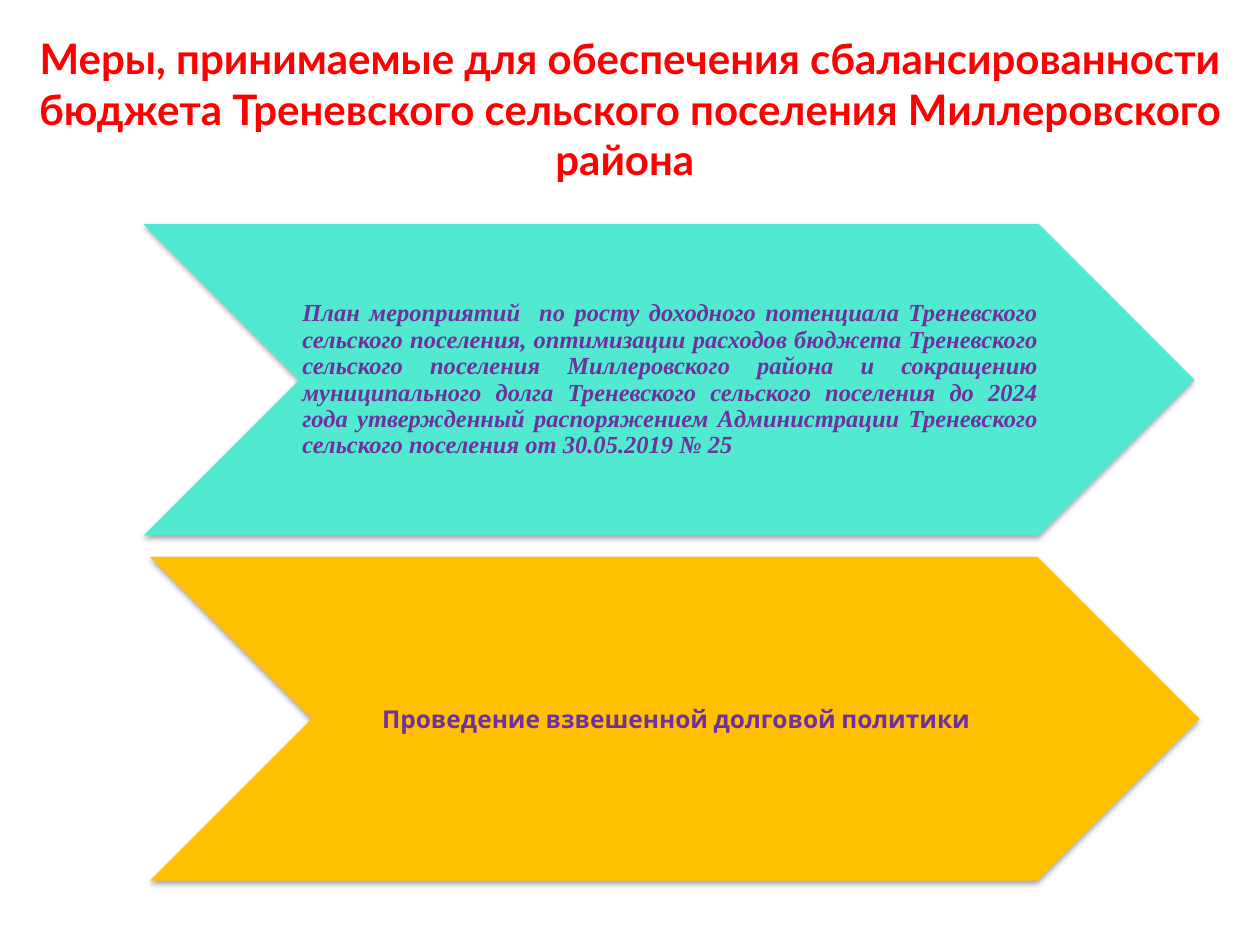
"""Build a slide with two chevrons listing budget balancing measures."""
from dataclasses import dataclass

from lxml import etree
from pptx import Presentation
from pptx.dml.color import RGBColor
from pptx.enum.shapes import MSO_SHAPE
from pptx.enum.text import MSO_ANCHOR, PP_ALIGN
from pptx.oxml.ns import qn
from pptx.shapes.autoshape import Shape
from pptx.slide import Slide
from pptx.text.text import TextFrame
from pptx.util import Inches, Pt

CHEVRON = MSO_SHAPE.CHEVRON
TOP, MIDDLE = MSO_ANCHOR.TOP, MSO_ANCHOR.MIDDLE
CENTER, JUSTIFY = PP_ALIGN.CENTER, PP_ALIGN.JUSTIFY
COLORS = {
    "title": "FF0000",
    "text": "7030A0",
    "plan": "51E9D0",
    "debt": "FFC000",
    "shadow": "000000",
}
TITLE = (
    "Меры, принимаемые для обеспечения сбалансированности бюджета "
    "Треневского сельского поселения Миллеровского района "
)
PLAN = (
    "План мероприятий  по росту доходного потенциала Треневского сельского "
    "поселения, оптимизации расходов бюджета Треневского сельского поселения "
    "Миллеровского района и сокращению муниципального долга Треневского "
    "сельского поселения до 2024 года утвержденный распоряжением "
    "Администрации Треневского сельского поселения от 30.05.2019 № 25"
)
DEBT = "Проведение взвешенной долговой политики"


@dataclass(frozen=True)
class Measure:
    """A chevron and the text block laid over it."""

    text: str
    fill: str
    left: float
    top: float
    width: float
    height: float
    inner: float
    span: float
    font: str
    align: PP_ALIGN
    italic: bool = False
    line: float = 1.0


MEASURES = [
    Measure(PLAN, "plan", 1.14, 1.78, 8.34, 2.47, 2.38, 5.86,
            "Times New Roman", JUSTIFY, True, 0.9),
    Measure(DEBT, "debt", 1.19, 4.42, 8.33, 2.57, 2.48, 5.75, "Cabin", CENTER),
]


def write(frame: TextFrame, text: str, *, font: str, size: float, color: str,
          align: PP_ALIGN, anchor: MSO_ANCHOR, italic: bool = False,
          line: float = 1.0) -> None:
    """Fill a frame with one bold paragraph."""
    frame.word_wrap = True
    frame.vertical_anchor = anchor
    para = frame.paragraphs[0]
    para.alignment = align
    para.line_spacing = line
    run = para.add_run()
    run.text = text
    run.font.name = font
    run.font.size = Pt(size)
    run.font.bold = True
    run.font.italic = italic
    run.font.color.rgb = RGBColor.from_string(COLORS[color])


def shade(shape: Shape) -> None:
    """Give a shape a soft shadow below it."""
    shape.shadow.inherit = False
    effects = shape.fill._xPr.find(qn("a:effectLst"))
    shadow = etree.SubElement(
        effects, qn("a:outerShdw"), blurRad=str(Pt(3.1)), dist=str(Pt(1.8)),
        dir="5400000", algn="ctr", rotWithShape="0")
    color = etree.SubElement(shadow, qn("a:srgbClr"), val=COLORS["shadow"])
    etree.SubElement(color, qn("a:alpha"), val="35000")


def draw(slide: Slide, item: Measure) -> None:
    """Draw one measure."""
    top, height = Inches(item.top), Inches(item.height)
    arrow = slide.shapes.add_shape(
        CHEVRON, Inches(item.left), top, Inches(item.width), height)
    arrow.fill.solid()
    arrow.fill.fore_color.rgb = RGBColor.from_string(COLORS[item.fill])
    arrow.line.fill.background()
    shade(arrow)
    box = slide.shapes.add_textbox(
        Inches(item.inner), top, Inches(item.span), height)
    frame = box.text_frame
    frame.margin_left, frame.margin_right = Inches(0.02), 0
    frame.margin_top = frame.margin_bottom = Inches(0.01)
    write(frame, item.text, font=item.font, size=14, color="text",
          align=item.align, anchor=MIDDLE, italic=item.italic, line=item.line)


def main() -> None:
    """Build and save the slide."""
    deck = Presentation()
    deck.slide_width, deck.slide_height = Inches(10), Inches(7.5)
    slide = deck.slides.add_slide(deck.slide_layouts[5])
    title = slide.shapes.title
    title.left, title.top = 0, Inches(0.21)
    title.width, title.height = Inches(10), Inches(1.31)
    write(title.text_frame, TITLE, font="Lato", size=24, color="title",
          align=CENTER, anchor=TOP)
    for item in MEASURES:
        draw(slide, item)
    deck.save("out.pptx")


if __name__ == "__main__":
    main()
